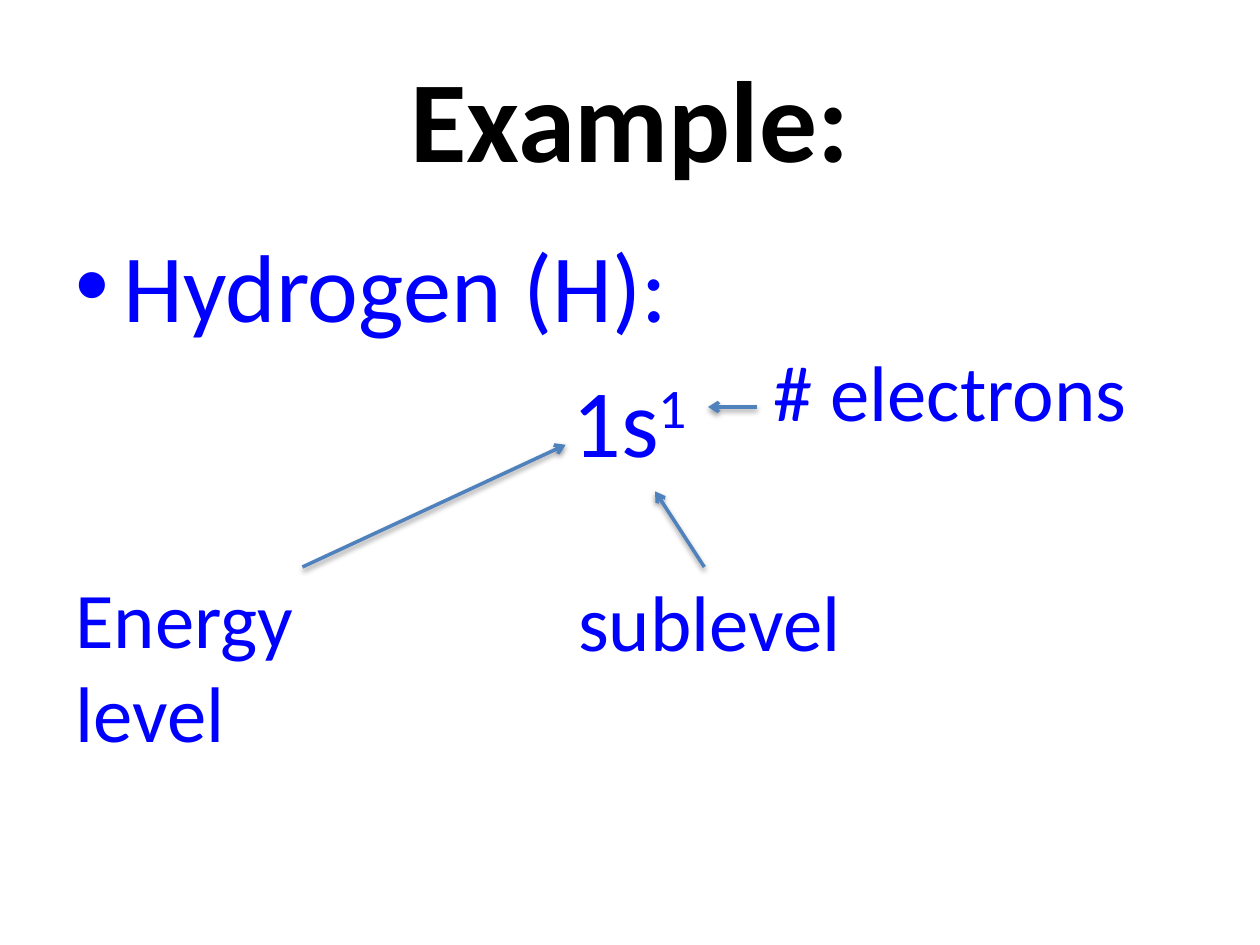
from lxml import etree
from pptx import Presentation
from pptx.dml.color import RGBColor
from pptx.enum.shapes import MSO_CONNECTOR
from pptx.enum.text import MSO_ANCHOR, MSO_AUTO_SIZE, PP_ALIGN
from pptx.oxml import parse_xml
from pptx.oxml.ns import nsdecls, qn
from pptx.util import Inches, Pt

STRAIGHT = MSO_CONNECTOR.STRAIGHT
MIDDLE, TOP = MSO_ANCHOR.MIDDLE, MSO_ANCHOR.TOP
LEFT, CENTER = PP_ALIGN.LEFT, PP_ALIGN.CENTER
FIT_SHAPE = MSO_AUTO_SIZE.SHAPE_TO_FIT_TEXT

BLACK = RGBColor(0x00, 0x00, 0x00)
BLUE = RGBColor(0x00, 0x00, 0xFF)
STEEL = RGBColor(0x4F, 0x81, 0xBD)
FONT = "Calibri"
WIDTH, HEIGHT = 10, 7.5
MARGIN = 0.5
LABEL_WIDTH = 3.09

SHADOW = (
    f'<a:effectLst {nsdecls("a")}>'
    '<a:outerShdw blurRad="40000" dist="20000" dir="5400000" rotWithShape="0">'
    '<a:srgbClr val="000000"><a:alpha val="38000"/></a:srgbClr>'
    '</a:outerShdw></a:effectLst>'
)


def add_frame(slide, box, anchor=TOP):
    frame = slide.shapes.add_textbox(*map(Inches, box)).text_frame
    frame.word_wrap = True
    frame.vertical_anchor = anchor
    return frame


def add_run(paragraph, text, size, color=BLUE, bold=False):
    run = paragraph.add_run()
    run.text = text
    font = run.font
    font.name, font.size, font.bold = FONT, Pt(size), bold
    font.color.rgb = color
    return run


def set_space_before(paragraph, percent):
    spacing = etree.SubElement(paragraph._p.get_or_add_pPr(), qn("a:spcBef"))
    etree.SubElement(spacing, qn("a:spcPct"), val=str(percent * 1000))


def set_bullet(paragraph, indent):
    properties = paragraph._p.get_or_add_pPr()
    properties.set("marL", str(Inches(indent)))
    properties.set("indent", str(-Inches(indent)))
    etree.SubElement(properties, qn("a:buFont"), typeface="Arial")
    etree.SubElement(properties, qn("a:buChar"), char="•")


def add_title(slide, box):
    heading = add_frame(slide, box, MIDDLE).paragraphs[0]
    heading.alignment = CENTER
    add_run(heading, "Example:", 66, BLACK, bold=True)


def add_configuration(slide, box):
    frame = add_frame(slide, box)
    # Element name
    element = frame.paragraphs[0]
    element.alignment = LEFT
    set_space_before(element, 20)
    set_bullet(element, 0.38)
    add_run(element, "Hydrogen (H):", 55)
    # Electron configuration with its superscript
    notation = frame.add_paragraph()
    notation.alignment = CENTER
    set_space_before(notation, 20)
    add_run(notation, "1s", 55)
    electron_count = add_run(notation, "1", 55)
    electron_count.font._element.set("baseline", "30000")


def add_label(slide, box, text):
    frame = add_frame(slide, box)
    frame.auto_size = FIT_SHAPE
    add_run(frame.paragraphs[0], text, 45)


def add_arrow(slide, start, end):
    arrow = slide.shapes.add_connector(STRAIGHT, *map(Inches, start + end))
    arrow.line.color.rgb = STEEL
    arrow.line.width = Pt(2)
    etree.SubElement(arrow.line._get_or_add_ln(), qn("a:tailEnd"), type="arrow")
    arrow._element.spPr.append(parse_xml(SHADOW))


def add_callouts(slide):
    # Label, its left, top and height, then the arrow's start and end
    callouts = (
        ("Energy level", MARGIN, 4.47, 1.62, (2.4, 4.5), (4.49, 3.53)),
        ("sublevel", 4.49, 4.5, 0.86, (5.59, 4.5), (5.2, 3.9)),
        ("# electrons", 6.04, 2.67, 0.86, (6.01, 3.23), (5.62, 3.23)),
    )
    for text, left, top, height, start, end in callouts:
        add_label(slide, (left, top, LABEL_WIDTH, height), text)
        add_arrow(slide, start, end)


def main():
    deck = Presentation()
    deck.slide_width, deck.slide_height = Inches(WIDTH), Inches(HEIGHT)
    slide = deck.slides.add_slide(deck.slide_layouts[6])
    content_width = WIDTH - 2 * MARGIN
    add_title(slide, (MARGIN, 0.3, content_width, 1.25))
    add_configuration(slide, (MARGIN, 1.75, content_width, 4.95))
    add_callouts(slide)
    deck.save("out.pptx")


if __name__ == "__main__":
    main()
